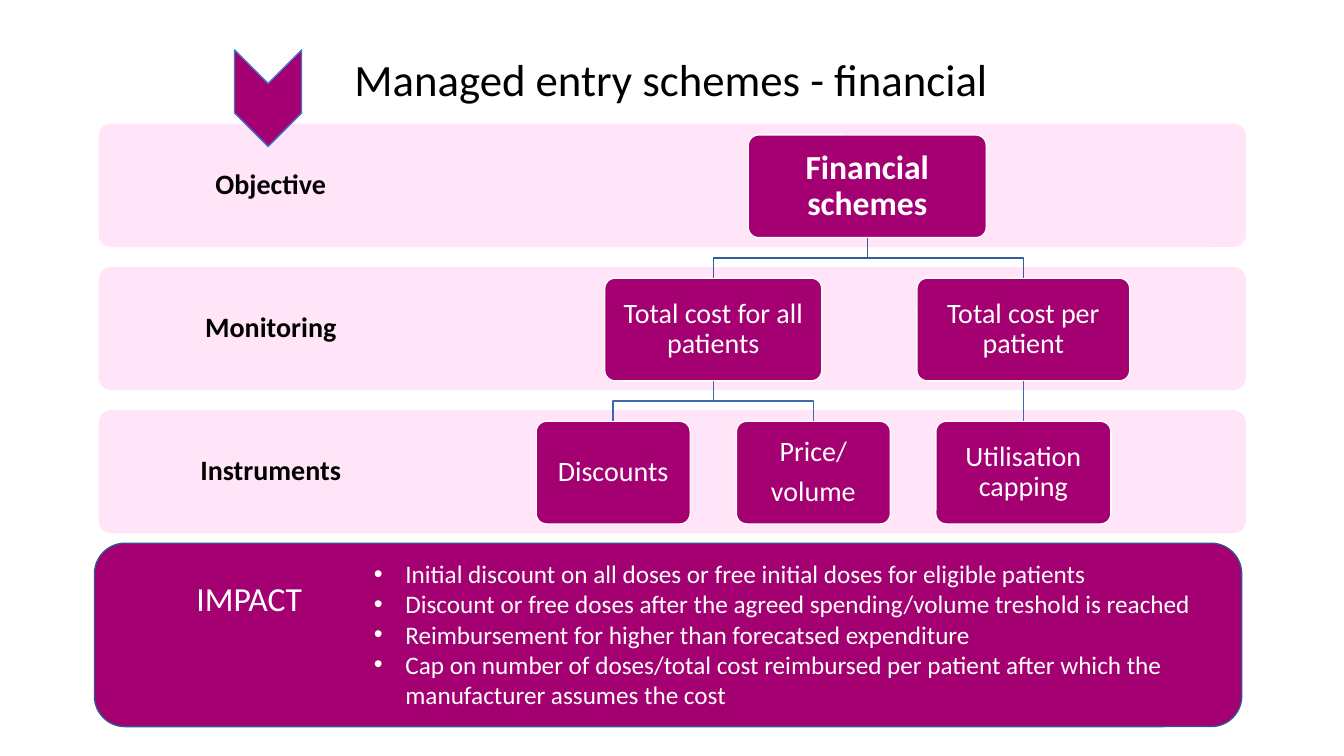
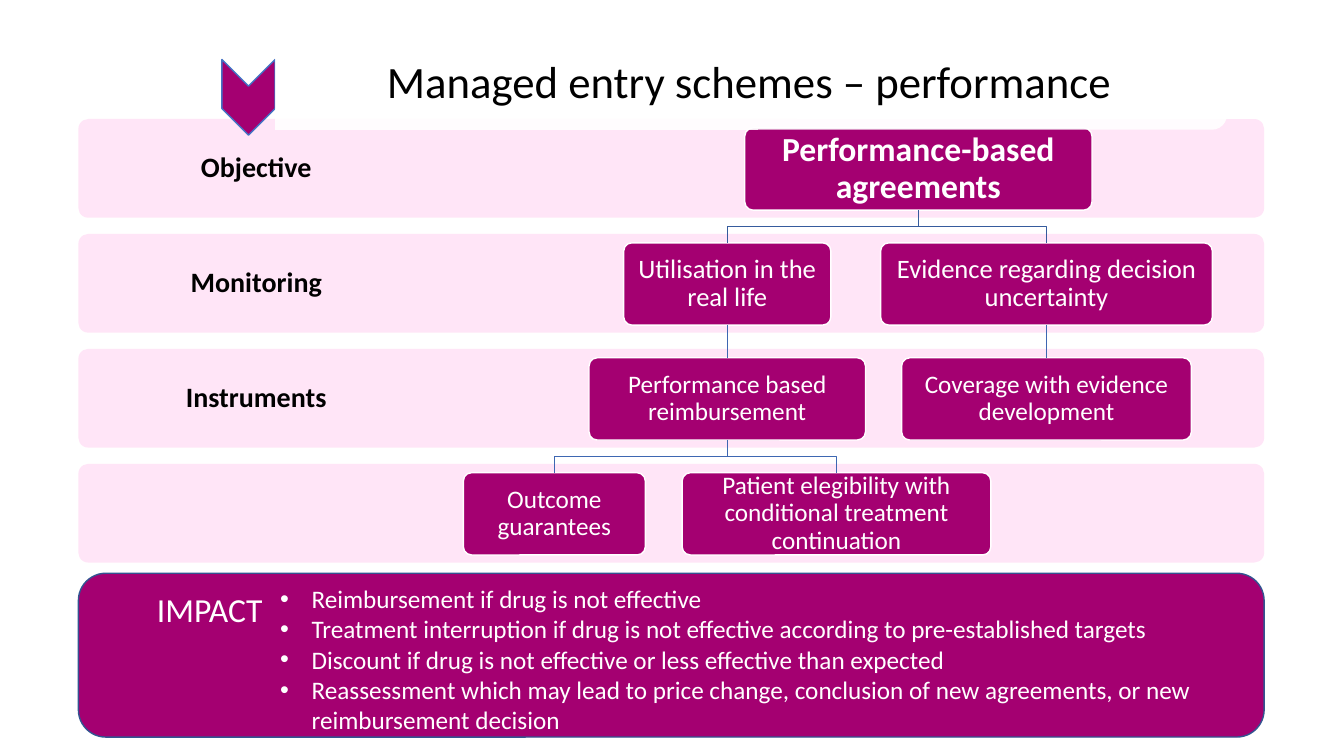
from dataclasses import dataclass

import lxml.etree
import pptx
import pptx.dml.color
import pptx.enum.shapes
import pptx.enum.text
import pptx.oxml.ns
import pptx.util

Pt = pptx.util.Pt
qn = pptx.oxml.ns.qn
SHAPE = pptx.enum.shapes.MSO_SHAPE
ALIGN = pptx.enum.text.PP_ALIGN
ANCHOR = pptx.enum.text.MSO_ANCHOR


@dataclass(frozen=True)
class Theme:
    font: str = "Calibri"
    accent: str = "A40071"
    band: str = "FFE5F7"
    white: str = "FFFFFF"
    black: str = "000000"
    arrow_line: str = "4472C4"
    impact_line: str = "325491"
    root_link: str = "365B9D"
    link: str = "3E67B2"
    title_size: float = 32
    heading_size: float = 24
    label_size: float = 20
    bullet_size: float = 18
    line_width: float = 1
    tight: float = 0.9
    corner: float = 0.1


THEME = Theme()


@dataclass(frozen=True)
class Box:
    left: float
    top: float
    width: float
    height: float

    def lengths(self):
        return [Pt(value) for value in (self.left, self.top, self.width, self.height)]


@dataclass(frozen=True)
class Node:
    """One box of the tree; center is its horizontal middle on the page."""
    text: str
    center: float
    width: float
    children: tuple = ()


@dataclass(frozen=True)
class Scheme:
    title: str
    title_box: Box
    title_panel: Box
    arrow: Box
    first_band: Box
    band_pitch: float
    labels: tuple
    level_sizes: tuple
    root: Node
    impact: Box
    impact_label: tuple
    bullets_at: tuple
    bullets: tuple


def color(value):
    return pptx.dml.color.RGBColor.from_string(value)


def style_shape(shape, fill=None, line=None):
    shape.shadow.inherit = False
    if fill:
        shape.fill.solid()
        shape.fill.fore_color.rgb = color(fill)
    else:
        shape.fill.background()
    if line:
        shape.line.color.rgb = color(line)
        shape.line.width = Pt(THEME.line_width)
    else:
        shape.line.fill.background()


def add_block(page, kind, box, fill, line=None):
    block = page.shapes.add_shape(kind, *box.lengths())
    style_shape(block, fill, line)
    return block


def add_quarter_turned(page, kind, box, fill, line=None):
    """Place a shape turned by 90 degrees so that it covers the given box."""
    shift = (box.width - box.height) / 2
    unturned = Box(box.left + shift, box.top - shift, box.height, box.width)
    block = add_block(page, kind, unturned, fill, line)
    block.rotation = 90
    return block


def write(shape, lines, size, ink, bold=False, align=ALIGN.LEFT,
          anchor=ANCHOR.TOP, inset=None, spacing=1.0, after=0):
    frame = shape.text_frame
    frame.word_wrap = True
    frame.auto_size = pptx.enum.text.MSO_AUTO_SIZE.NONE
    frame.vertical_anchor = anchor
    if inset is not None:
        frame.margin_left = frame.margin_right = Pt(inset)
        frame.margin_top = frame.margin_bottom = Pt(inset)
    for number, line in enumerate(lines):
        para = frame.add_paragraph() if number else frame.paragraphs[0]
        para.text = line
        para.alignment = align
        para.line_spacing = spacing
        para.space_after = Pt(after)
        para.font.name = THEME.font
        para.font.size = Pt(size)
        para.font.bold = bold
        para.font.color.rgb = color(ink)
    return frame


def add_bullets(frame, indent=22.5):
    for para in frame.paragraphs:
        properties = para._p.get_or_add_pPr()
        properties.set("marL", str(Pt(indent)))
        properties.set("indent", str(-Pt(indent)))
        font = lxml.etree.SubElement(properties, qn("a:buFont"))
        font.set("typeface", "Arial")
        lxml.etree.SubElement(properties, qn("a:buChar")).set("char", "•")
        # defRPr has to follow the bullet in the schema's order
        defaults = properties.find(qn("a:defRPr"))
        if defaults is not None:
            properties.append(defaults)


def draw_bands(page, first, pitch, labels):
    for row, label in enumerate(labels):
        box = Box(first.left, first.top + row * pitch, first.width, first.height)
        band = add_block(page, SHAPE.ROUNDED_RECTANGLE, box, THEME.band)
        band.adjustments[0] = THEME.corner
        if label:
            label_box = Box(box.left, box.top, box.width * 0.3, box.height)
            holder = page.shapes.add_textbox(*label_box.lengths())
            write(holder, [label], THEME.label_size, THEME.black, bold=True,
                  align=ALIGN.CENTER, anchor=ANCHOR.MIDDLE, inset=11.5,
                  spacing=THEME.tight)


def link_nodes(page, parent, child, ink):
    """Join parent's bottom to child's top, straight when they are aligned."""
    start_x, end_x = (shape.left + shape.width // 2 for shape in (parent, child))
    start_y, end_y = parent.top + parent.height, child.top
    if abs(start_x - end_x) < Pt(1):
        link = page.shapes.add_connector(
            pptx.enum.shapes.MSO_CONNECTOR.STRAIGHT, start_x, start_y, end_x, end_y)
        link.begin_connect(parent, 2)
        link.end_connect(child, 0)
        link.line.color.rgb = color(ink)
        link.line.width = Pt(THEME.line_width)
        lxml.etree.SubElement(link._element.spPr, qn("a:effectLst"))
        return
    middle = (start_y + end_y) // 2
    builder = page.shapes.build_freeform(start_x, start_y)
    builder.add_line_segments(
        [(start_x, middle), (end_x, middle), (end_x, end_y)], close=False)
    style_shape(builder.convert_to_shape(), line=ink)


def draw_tree(page, node, first, pitch, sizes, level=0):
    """Draw a node in the band of its level, then its branches below it."""
    size = sizes[level]
    box = Box(node.center - node.width / 2,
              first.top + level * pitch + first.height * 0.09,
              node.width, first.height * 5 / 6)
    block = add_block(page, SHAPE.ROUNDED_RECTANGLE, box, THEME.accent, THEME.white)
    block.adjustments[0] = THEME.corner
    write(block, node.text.split("\n"), size, THEME.white, bold=level == 0,
          align=ALIGN.CENTER, anchor=ANCHOR.MIDDLE, inset=size * 0.4,
          spacing=THEME.tight, after=size * 0.35)
    for child in node.children:
        branch = draw_tree(page, child, first, pitch, sizes, level + 1)
        link_nodes(page, block, branch, THEME.link if level else THEME.root_link)
    return block


def draw_impact(page, box, label_at, bullets_at, bullets):
    """Draw the bottom panel; label_at and bullets_at are offsets inside it."""
    add_block(page, SHAPE.ROUNDED_RECTANGLE, box, THEME.accent, THEME.impact_line)
    label_box = Box(box.left + label_at[0], box.top + label_at[1], 107, 36)
    label = page.shapes.add_textbox(*label_box.lengths())
    write(label, ["IMPACT"], THEME.heading_size, THEME.white)
    left, top, width = bullets_at
    bullet_box = Box(box.left + left, box.top + top, width, box.height - top)
    holder = page.shapes.add_textbox(*bullet_box.lengths())
    add_bullets(write(holder, bullets, THEME.bullet_size, THEME.white))


def draw_heading(page, scheme):
    add_quarter_turned(page, SHAPE.CHEVRON, scheme.arrow, THEME.accent, THEME.arrow_line)
    panel = add_quarter_turned(page, SHAPE.ROUND_2_SAME_RECTANGLE,
                               scheme.title_panel, THEME.white)
    tint = panel._element.spPr.find(qn("a:solidFill"))[0]
    lxml.etree.SubElement(tint, qn("a:alpha")).set("val", "90000")
    title = page.shapes.title
    title.left, title.top, title.width, title.height = scheme.title_box.lengths()
    frame = write(title, [scheme.title], THEME.title_size, THEME.black,
                  align=ALIGN.CENTER, anchor=ANCHOR.MIDDLE, inset=1.5,
                  spacing=THEME.tight)
    frame.margin_left = Pt(18)
    page.shapes._spTree.append(title._element)


def add_scheme_page(deck, scheme):
    page = deck.slides.add_slide(deck.slide_layouts.get_by_name("Title Only"))
    draw_bands(page, scheme.first_band, scheme.band_pitch, scheme.labels)
    draw_tree(page, scheme.root, scheme.first_band, scheme.band_pitch, scheme.level_sizes)
    draw_impact(page, scheme.impact, scheme.impact_label, scheme.bullets_at, scheme.bullets)
    draw_heading(page, scheme)


LABELS = ("Objective", "Monitoring", "Instruments")

FINANCIAL = Scheme(
    title="Managed entry schemes - financial",
    title_box=Box(216, 38, 510.5, 40.5),
    title_panel=Box(216, 36, 512.5, 44.5),
    arrow=Box(167.5, 35.7, 48, 69),
    first_band=Box(70.5, 88.5, 819.5, 88),
    band_pitch=102.25,
    labels=LABELS,
    level_sizes=(24, 20, 20),
    root=Node("Financial schemes", 619.5, 170, (
        Node("Total cost for all patients", 509.5, 155, (
            Node("Discounts", 438, 110),
            Node("Price/\nvolume", 581, 110))),
        Node("Total cost per patient", 731, 152, (
            Node("Utilisation capping", 731, 125),)))),
    impact=Box(67.5, 388, 819.5, 131),
    impact_label=(65.7, 21),
    bullets_at=(192.5, 7.3, 603.5),
    bullets=(
        "Initial discount on all doses or free initial doses for eligible patients",
        "Discount or free doses after the agreed spending/volume treshold is reached",
        "Reimbursement for higher than forecatsed expenditure",
        "Cap on number of doses/total cost reimbursed per patient after which the "
        "manufacturer assumes the cost"))

PERFORMANCE = Scheme(
    title="Managed entry schemes – performance",
    title_box=Box(196.5, 31, 661, 58.5),
    title_panel=Box(196.5, 27.7, 680, 65),
    arrow=Box(158.5, 42.5, 38, 54),
    first_band=Box(56, 85, 847, 70.5),
    band_pitch=82.1,
    labels=LABELS + ("",),
    level_sizes=(24, 19, 18, 18),
    root=Node("Performance-based agreements", 656, 248, (
        Node("Utilisation in the real life", 519.5, 148, (
            Node("Performance based reimbursement", 519.5, 197.5, (
                Node("Outcome guarantees", 396, 130),
                Node("Patient elegibility with conditional treatment continuation",
                     597.5, 220.5))),)),
        Node("Evidence regarding decision uncertainty", 747.5, 237, (
            Node("Coverage with evidence development", 747.5, 207),)))),
    impact=Box(56, 409.5, 847, 117),
    impact_label=(49, 7.3),
    bullets_at=(137, 3.7, 704),
    bullets=(
        "Reimbursement if drug is not effective",
        "Treatment interruption if drug is not effective according to "
        "pre-established targets",
        "Discount if drug is not effective or less effective than expected",
        "Reassessment which may lead to price change, conclusion of new agreements, "
        "or new reimbursement decision"))


def main():
    deck = pptx.Presentation()
    deck.slide_width, deck.slide_height = Pt(960), Pt(540)
    for scheme in (FINANCIAL, PERFORMANCE):
        add_scheme_page(deck, scheme)
    deck.save("out.pptx")


if __name__ == "__main__":
    main()
